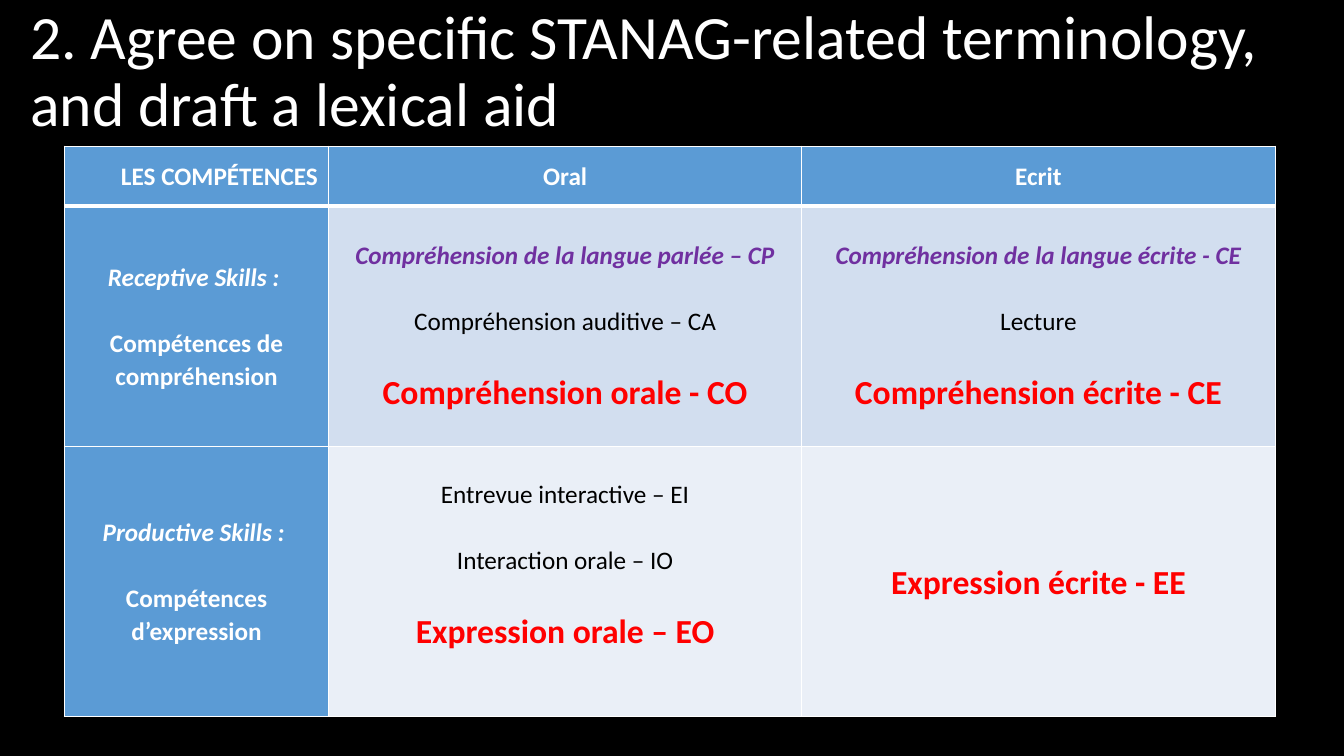
from pptx import Presentation
from pptx.dml.color import RGBColor
from pptx.enum import text as txt
from pptx.oxml import ns, xmlchemy
from pptx.util import Inches, Pt

BLACK = RGBColor(0x00, 0x00, 0x00)
WHITE = RGBColor(0xFF, 0xFF, 0xFF)
BLUE = RGBColor(0x5B, 0x9B, 0xD5)
PALE_BLUE = RGBColor(0xD2, 0xDE, 0xEF)
PALER_BLUE = RGBColor(0xEA, 0xEF, 0xF7)
PURPLE = RGBColor(0x70, 0x30, 0xA0)
RED = RGBColor(0xFF, 0x00, 0x00)

FONT = "Calibri"
LINE_GAP = Pt(23.5)
COLUMN_SHARES = (2.62, 4.69, 4.70)
ROW_SHARES = (0.59, 2.38, 2.67)

STYLES = {
    "heading": (18, WHITE, True, False),
    "skill": (18, WHITE, True, True),
    "former": (18, PURPLE, True, True),
    "option": (18, BLACK, False, False),
    "agreed": (24, RED, True, False),
}

TERMS = [
    [
        [("heading", "LES COMPÉTENCES")],
        [("heading", "Oral")],
        [("heading", "Ecrit")],
    ],
    [
        [("skill", "Receptive Skills : "), ("heading", "Compétences de compréhension")],
        [("former", "Compréhension de la langue parlée – CP"),
         ("option", "Compréhension auditive – CA"),
         ("agreed", "Compréhension orale - CO")],
        [("former", "Compréhension de la langue écrite - CE"),
         ("option", "Lecture"),
         ("agreed", "Compréhension écrite - CE")],
    ],
    [
        [("skill", "Productive Skills : "), ("heading", "Compétences d’expression")],
        [("option", "Entrevue interactive – EI"),
         ("option", "Interaction orale – IO"),
         ("agreed", "Expression orale – EO")],
        [("agreed", "Expression écrite - EE")],
    ],
]


def add_run(paragraph, wording, size, color, bold=False, italic=False):
    """Append one formatted run to a paragraph."""
    run = paragraph.add_run()
    run.text = wording
    run.font.name = FONT
    run.font.size = Pt(size)
    run.font.color.rgb = color
    run.font.bold = bold
    run.font.italic = italic


def set_borders(cell, widths):
    """Draw white cell borders, given the width in points of each side."""
    properties = cell._tc.get_or_add_tcPr()
    for position, (side, width) in enumerate(widths.items()):
        border = xmlchemy.OxmlElement(f"a:ln{side}")
        border.set("w", str(Pt(width)))
        fill = xmlchemy.OxmlElement("a:solidFill")
        color = xmlchemy.OxmlElement("a:srgbClr")
        color.set("val", str(WHITE))
        fill.append(color)
        border.append(fill)
        properties.insert(position, border)


def fill_cell(cell, entries, fill):
    """Write the spaced, centred terms of one cell on its background."""
    cell.fill.solid()
    cell.fill.fore_color.rgb = fill
    cell.vertical_anchor = txt.MSO_ANCHOR.MIDDLE
    cell.margin_left = cell.margin_right = Inches(0.07)
    cell.margin_top = cell.margin_bottom = 0
    for index, (style, wording) in enumerate(entries):
        frame = cell.text_frame
        term = frame.add_paragraph() if index else frame.paragraphs[0]
        term.alignment = txt.PP_ALIGN.CENTER
        term.line_spacing = 1.07
        term.space_before = LINE_GAP if index else Pt(0)
        add_run(term, wording, *STYLES[style])


def add_title(slide, left, top, width, height):
    """Place the slide title in the given box."""
    title = slide.shapes.title
    title.left, title.top, title.width, title.height = left, top, width, height
    frame = title.text_frame
    frame.auto_size = txt.MSO_AUTO_SIZE.NONE
    frame.vertical_anchor = txt.MSO_ANCHOR.MIDDLE
    heading = frame.paragraphs[0]
    heading.alignment = txt.PP_ALIGN.LEFT
    heading.line_spacing = 0.9
    add_run(heading, "2. Agree on specific STANAG-related terminology, "
            "and draft a lexical aid", 44, WHITE)


def add_lexicon(slide, left, top, width, height):
    """Place the table of skills and their terms in the given box."""
    lexicon = slide.shapes.add_table(
        len(ROW_SHARES), len(COLUMN_SHARES), left, top, width, height).table
    for column, share in zip(lexicon.columns, COLUMN_SHARES):
        column.width = int(width * share / sum(COLUMN_SHARES))
    for row, share in zip(lexicon.rows, ROW_SHARES):
        row.height = int(height * share / sum(ROW_SHARES))
    row_fills = (BLUE, PALE_BLUE, PALER_BLUE)
    for r, skills in enumerate(TERMS):
        for c, entries in enumerate(skills):
            cell = lexicon.cell(r, c)
            fill_cell(cell, entries, row_fills[r] if c else BLUE)
            set_borders(cell, {"L": 1, "R": 1, "T": 3 if r == 1 else 1,
                               "B": 1 if r else 3})
    corner = lexicon.cell(0, 0)
    corner.margin_left = Inches(0.56)
    corner.text_frame.paragraphs[0].alignment = txt.PP_ALIGN.LEFT
    lexicon.cell(2, 1).margin_bottom = Inches(0.33)


def main():
    """Build and save the terminology slide."""
    deck = Presentation()
    deck.slide_width, deck.slide_height = Inches(13.33), Inches(7.5)
    slide = deck.slides.add_slide(deck.slide_layouts.get_by_name("Title Only"))
    slide.background.fill.solid()
    slide.background.fill.fore_color.rgb = BLACK
    add_title(slide, Inches(0.2), 0, Inches(12.89), Inches(1.45))
    add_lexicon(slide, Inches(0.64), Inches(1.45), Inches(12.01), Inches(5.66))
    deck.save("out.pptx")


if __name__ == "__main__":
    main()
